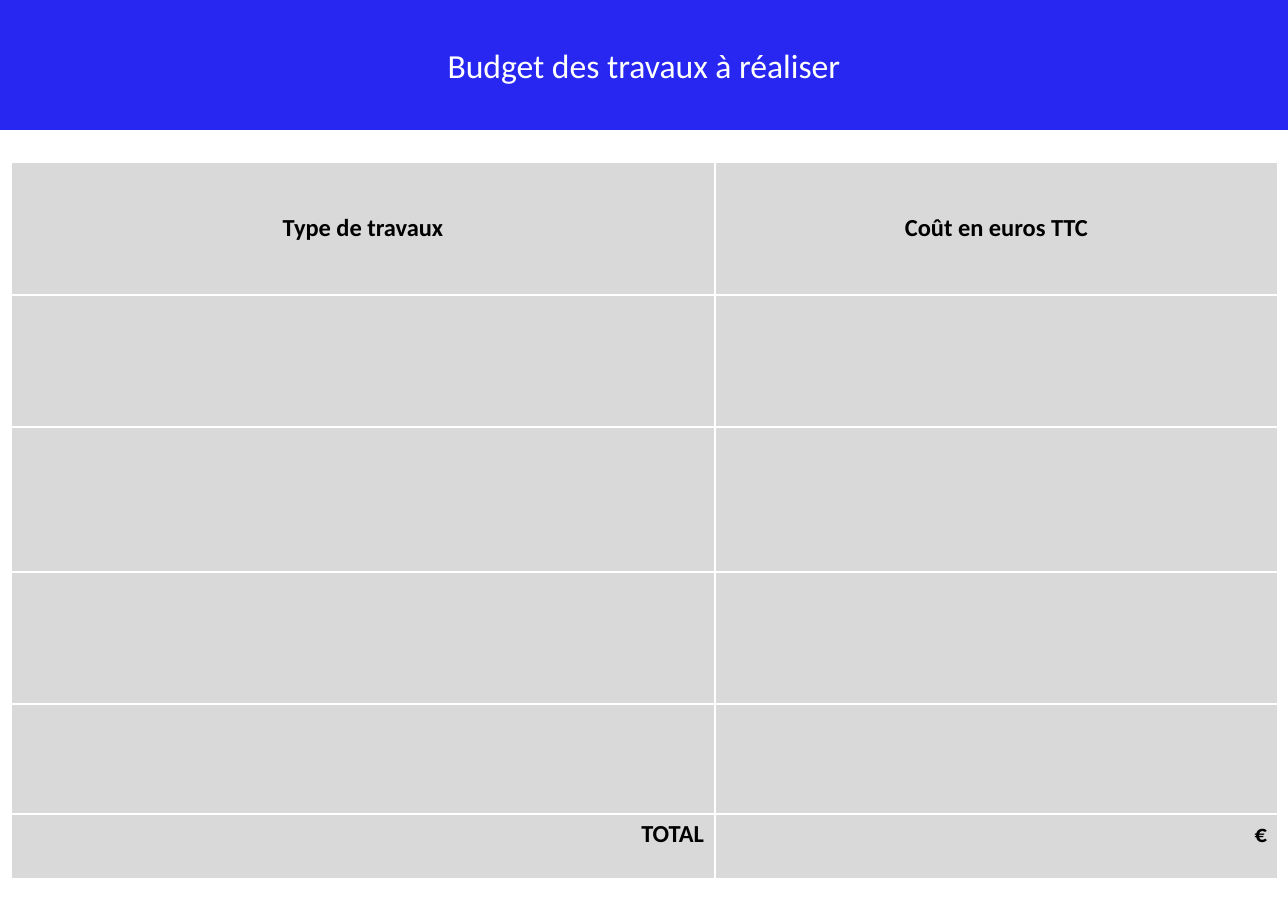
from lxml.etree import SubElement
from pptx import Presentation
from pptx.dml.color import RGBColor
from pptx.enum.shapes import MSO_SHAPE as Shape
from pptx.enum.text import MSO_ANCHOR as Anchor, PP_ALIGN as Align
from pptx.oxml.ns import qn
from pptx.util import Inches, Pt

BLUE = RGBColor(0x27, 0x27, 0xF1)
GREY = RGBColor(0xD9, 0xD9, 0xD9)
WHITE = RGBColor(0xFF, 0xFF, 0xFF)
BLACK = RGBColor(0x00, 0x00, 0x00)

PAGE_WIDTH, PAGE_HEIGHT = 11.69, 8.27
COLUMN_WIDTHS = [6.39, 5.11]
ROW_HEIGHTS = [1.21, 1.2, 1.31, 1.2, 1, 0.59]
HEADINGS = ["Type de travaux", "Coût en euros TTC"]
TOTALS = ["TOTAL", "€"]


class BudgetPage:
    """Draws the budget elements on one slide in a shared style."""

    font_name = "Calibri"
    border_width = Pt(1.5)

    def __init__(self, page):
        self.page = page

    def set_text(self, frame, text, size, color, align, bold=False):
        para = frame.paragraphs[0]
        para.text = text
        para.alignment = align
        para.font.name = self.font_name
        para.font.size = Pt(size)
        para.font.bold = bold
        para.font.color.rgb = color

    def banner(self, text, width, height):
        box = self.page.shapes.add_shape(
            Shape.RECTANGLE, 0, 0, Inches(width), Inches(height))
        box.shadow.inherit = False
        box.fill.solid()
        box.fill.fore_color.rgb = BLUE
        box.line.fill.background()
        box.text_frame.word_wrap = True
        box.text_frame.vertical_anchor = Anchor.MIDDLE
        self.set_text(box.text_frame, text, 22, WHITE, Align.CENTER)

    def style_cell(self, cell):
        properties = cell._tc.get_or_add_tcPr()
        for side in ("lnL", "lnR", "lnT", "lnB"):
            line = SubElement(properties, qn(f"a:{side}"), w=str(self.border_width))
            fill = SubElement(line, qn("a:solidFill"))
            SubElement(fill, qn("a:srgbClr"), val=str(WHITE))
        cell.fill.solid()
        cell.fill.fore_color.rgb = GREY

    def fill_row(self, row, texts, align, anchor):
        for cell, text in zip(row.cells, texts):
            cell.vertical_anchor = anchor
            self.set_text(cell.text_frame, text, 16, BLACK, align, bold=True)

    def budget_table(self, left, top):
        table = self.page.shapes.add_table(
            len(ROW_HEIGHTS), len(COLUMN_WIDTHS), Inches(left), Inches(top),
            Inches(sum(COLUMN_WIDTHS)), Inches(sum(ROW_HEIGHTS))).table
        for column, width in zip(table.columns, COLUMN_WIDTHS):
            column.width = Inches(width)
        for row, height in zip(table.rows, ROW_HEIGHTS):
            row.height = Inches(height)
        for cell in table.iter_cells():
            self.style_cell(cell)
        self.fill_row(table.rows[0], HEADINGS, Align.CENTER, Anchor.MIDDLE)
        self.fill_row(table.rows[len(ROW_HEIGHTS) - 1], TOTALS, Align.RIGHT, Anchor.TOP)


def main():
    deck = Presentation()
    deck.slide_width = Inches(PAGE_WIDTH)
    deck.slide_height = Inches(PAGE_HEIGHT)
    budget = BudgetPage(deck.slides.add_slide(deck.slide_layouts[6]))
    budget.budget_table(0.1, 1.47)
    budget.banner("Budget des travaux à réaliser", PAGE_WIDTH, 1.18)
    deck.save("out.pptx")


if __name__ == "__main__":
    main()
